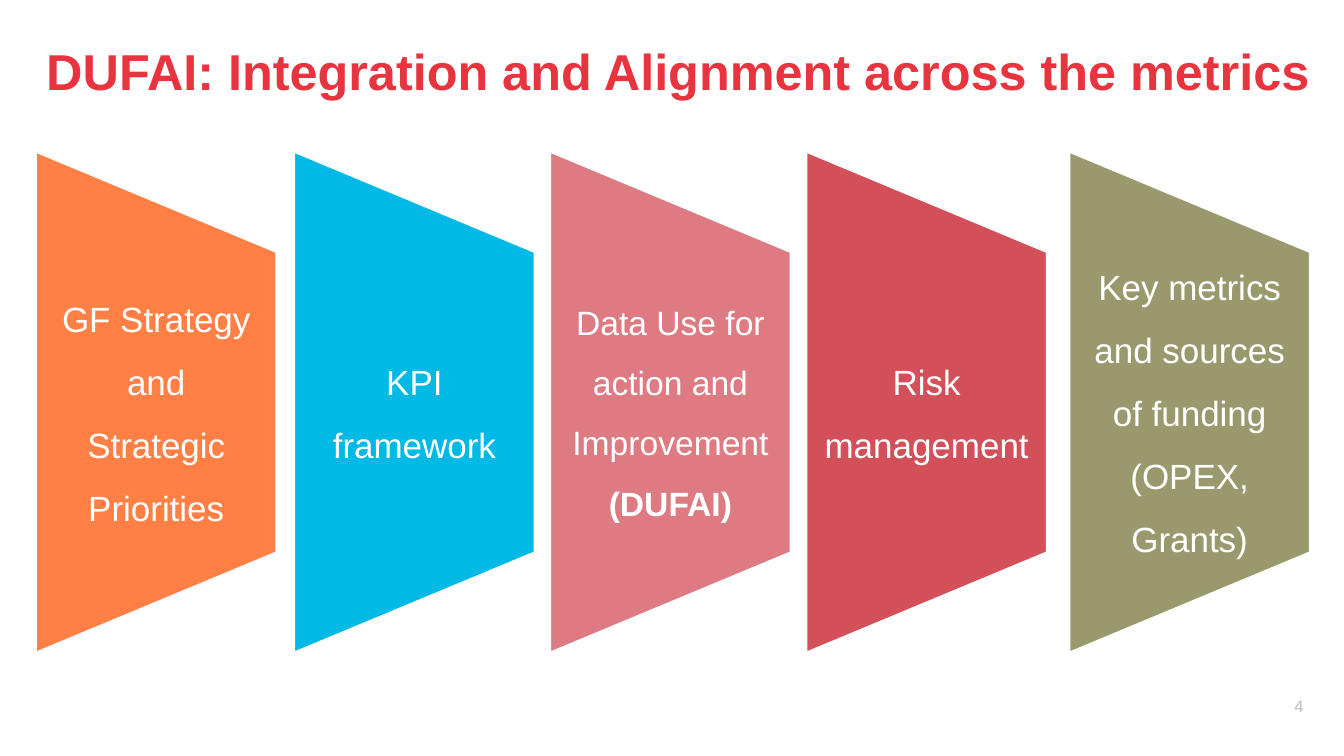
"""Build the slide on DUFAI integration and alignment across the metrics."""
from dataclasses import dataclass

from pptx import Presentation
from pptx.dml.color import RGBColor
from pptx.enum.shapes import MSO_SHAPE as Preset
from pptx.enum.text import MSO_ANCHOR as Anchor, PP_ALIGN as Align
from pptx.slide import Slide
from pptx.text.text import TextFrame
from pptx.util import Inches, Length, Pt

WIDTH, HEIGHT = Inches(13.33), Inches(7.5)
FONT = "Arial"
COLOURS = {
    "title": "E8343F",
    "white": "FFFFFF",
    "number": "BFBFBF",
    "orange": "FF7F45",
    "blue": "00B9E4",
    "pink": "DE7B82",
    "red": "D34F59",
    "olive": "9A996E",
}
PANEL_WIDTH, PANEL_HEIGHT, PANEL_MIDDLE = 17.85, 66.13, 53.2
LABEL_HEIGHT = 39.73


@dataclass(frozen=True)
class Span:
    text: str
    size: float
    colour: str = "white"
    bold: bool = False


@dataclass(frozen=True)
class Panel:
    left: float
    fill: str
    spans: tuple[Span, ...]


PANELS = (
    Panel(2.7, "orange", (Span("GF Strategy and Strategic Priorities", 25),)),
    Panel(21.91, "blue", (Span("KPI framework", 25),)),
    Panel(40.96, "pink", (Span("Data Use for action and Improvement ", 24),
                          Span("(DUFAI)", 24, bold=True))),
    Panel(60.02, "red", (Span("Risk management", 25),)),
    Panel(79.59, "olive", (Span("Key metrics and sources of funding (OPEX, Grants)", 25),)),
)


def across(percent: float) -> Length:
    """Turn a percentage of the slide's width into a length."""
    return Length(round(WIDTH * percent / 100))


def down(percent: float) -> Length:
    """Turn a percentage of the slide's height into a length."""
    return Length(round(HEIGHT * percent / 100))


def colour(name: str) -> RGBColor:
    """Look up a named colour."""
    return RGBColor.from_string(COLOURS[name])


def add_text(page: Slide, left: float, top: float, width: float, height: float,
             spans: tuple[Span, ...], align: Align = Align.LEFT,
             anchor: Anchor = Anchor.TOP) -> TextFrame:
    """Add a wrapping text box with one paragraph, run by run."""
    box = page.shapes.add_textbox(across(left), down(top), across(width), down(height))
    frame = box.text_frame
    frame.word_wrap = True
    frame.vertical_anchor = anchor
    para = frame.paragraphs[0]
    para.alignment = align
    for span in spans:
        run = para.add_run()
        run.text = span.text
        run.font.name = FONT
        run.font.size = Pt(span.size)
        run.font.bold = span.bold
        run.font.color.rgb = colour(span.colour)
    return frame


def set_insets(frame: TextFrame, side: Length) -> None:
    """Set equal side insets and no inset above or below."""
    frame.margin_left = frame.margin_right = side
    frame.margin_top = frame.margin_bottom = 0


def add_panel(page: Slide, panel: Panel) -> None:
    """Add a trapezoid turned on its side, with its label on top."""
    length, depth = down(PANEL_HEIGHT), across(PANEL_WIDTH)
    centre = across(panel.left + PANEL_WIDTH / 2)
    shape = page.shapes.add_shape(
        Preset.FLOWCHART_MANUAL_OPERATION,
        centre - length // 2, down(PANEL_MIDDLE) - depth // 2, length, depth)
    shape.rotation = 270
    shape.shadow.inherit = False
    shape.fill.solid()
    shape.fill.fore_color.rgb = colour(panel.fill)
    shape.line.color.rgb = colour("white")
    shape.line.width = Pt(1)

    label = add_text(page, panel.left, PANEL_MIDDLE - LABEL_HEIGHT / 2, PANEL_WIDTH,
                     LABEL_HEIGHT, panel.spans, Align.CENTER, Anchor.MIDDLE)
    set_insets(label, Inches(0.17))
    para = label.paragraphs[0]
    para.line_spacing = 1.5
    para.space_after = Pt(0.35 * panel.spans[0].size)


def main() -> None:
    """Build and save the deck."""
    deck = Presentation()
    deck.slide_width, deck.slide_height = WIDTH, HEIGHT
    page = deck.slides.add_slide(deck.slide_layouts[6])
    number = add_text(page, 93.17, 90.4, 3.83, 4.27, (Span("4", 12, "number"),),
                      Align.RIGHT, Anchor.BOTTOM)
    set_insets(number, Inches(0))
    title = "DUFAI: Integration and Alignment across the metrics"
    add_text(page, 2.7, 4.67, 98.42, 9.6, (Span(title, 36, "title", True),))
    for panel in PANELS:
        add_panel(page, panel)
    deck.save("out.pptx")


if __name__ == "__main__":
    main()
